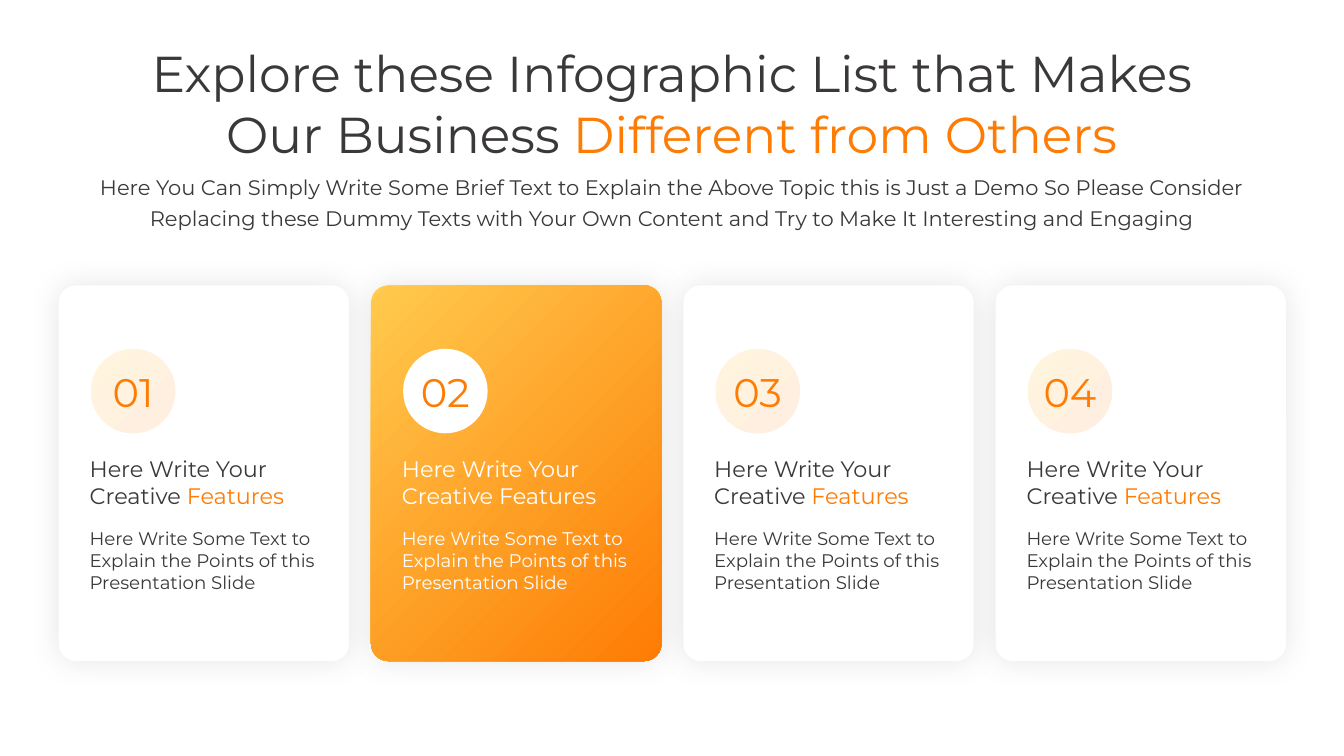
from lxml import etree
from pptx import Presentation
from pptx.dml.color import RGBColor
from pptx.enum.shapes import MSO_SHAPE as Shape
from pptx.enum.text import MSO_ANCHOR as Anchor, MSO_AUTO_SIZE as AutoSize, PP_ALIGN as Align
from pptx.oxml.ns import qn
from pptx.util import Cm, Pt

FONT = "Montserrat"
DARK, ORANGE, AMBER, WHITE = "3B3838", "FE7C04", "FFCA4E", "FFFFFF"
VIVID = ((0, ORANGE), (1, AMBER))
PALE = ((0.1, "FFEFE1"), (1, "FFF4DD"))

CARD_COUNT = 4
HIGHLIGHTED = 2
CARD_LEFT, CARD_TOP = 1.48, 7.19
CARD_WIDTH, CARD_HEIGHT = 7.32, 9.47
CARD_STEP = 7.87
BADGE_SIZE = 2.13
TEXT_WIDTH = 6.6


def color(value):
    return RGBColor.from_string(value)


def paint(shape, fill):
    """Fill with one hex colour, or with stops spreading from the bottom right corner."""
    if isinstance(fill, str):
        shape.fill.solid()
        shape.fill.fore_color.rgb = color(fill)
        return
    shape.fill.gradient()
    for stop, (position, value) in zip(shape.fill.gradient_stops, fill):
        stop.position = position
        stop.color.rgb = color(value)
    gradient = shape._element.spPr.find(qn("a:gradFill"))
    gradient.remove(gradient.find(qn("a:lin")))
    spread = etree.SubElement(gradient, qn("a:path"), path="circle")
    etree.SubElement(spread, qn("a:fillToRect"), l="100000", t="100000")
    etree.SubElement(gradient, qn("a:tileRect"), r="-100000", b="-100000")


def add_soft_shadow(shape):
    effects = shape._element.spPr.find(qn("a:effectLst"))
    shadow = etree.SubElement(effects, qn("a:outerShdw"), blurRad=str(Pt(22)),
                              dist="0", dir="0", algn="ctr", rotWithShape="0")
    black = etree.SubElement(shadow, qn("a:srgbClr"), val="000000")
    etree.SubElement(black, qn("a:alpha"), val="10000")


def write(shape, lines, size, align=Align.LEFT, spacing=None, anchor=Anchor.TOP):
    """Write lines, each a list of (text, colour) runs."""
    frame = shape.text_frame
    frame.word_wrap = True
    frame.auto_size = AutoSize.NONE
    frame.vertical_anchor = anchor
    for index, runs in enumerate(lines):
        paragraph = frame.add_paragraph() if index else frame.paragraphs[0]
        paragraph.alignment = align
        paragraph.space_before = Pt(0)
        paragraph.line_spacing = spacing
        paragraph.font.name = FONT
        paragraph.font.size = Pt(size)
        for text, value in runs:
            run = paragraph.add_run()
            run.text = text
            run.font.color.rgb = color(value)


def place(shape, left, top, width, height):
    shape.left, shape.top = Cm(left), Cm(top)
    shape.width, shape.height = Cm(width), Cm(height)


def add_shape(shapes, kind, left, top, width, height, fill):
    shape = shapes.add_shape(kind, Cm(left), Cm(top), Cm(width), Cm(height))
    shape.line.fill.background()
    shape.shadow.inherit = False
    paint(shape, fill)
    return shape


def add_text(shapes, left, top, height, lines, size):
    box = shapes.add_textbox(Cm(left), Cm(top), Cm(TEXT_WIDTH), Cm(height))
    write(box, lines, size)


def add_card(slide, number):
    shapes = slide.shapes.add_group_shape().shapes
    left = CARD_LEFT + (number - 1) * CARD_STEP
    highlighted = number == HIGHLIGHTED
    text_color = WHITE if highlighted else DARK
    accent = WHITE if highlighted else ORANGE

    card = add_shape(shapes, Shape.ROUNDED_RECTANGLE, left, CARD_TOP,
                     CARD_WIDTH, CARD_HEIGHT, VIVID if highlighted else WHITE)
    card.adjustments[0] = 0.06
    add_soft_shadow(card)

    badge = add_shape(shapes, Shape.OVAL, left + 0.81, 8.79,
                      BADGE_SIZE, BADGE_SIZE, WHITE if highlighted else PALE)
    frame = badge.text_frame
    frame.margin_left = frame.margin_right = frame.margin_top = frame.margin_bottom = 0
    write(badge, [[(f"{number:02}", ORANGE)]], 28.5, Align.CENTER, anchor=Anchor.MIDDLE)

    add_text(shapes, left + 0.53, 11.35, 1.65, [
        [("Here Write Your", text_color)],
        [("Creative ", text_color), ("Features", accent)],
    ], 16)
    body = ("Here Write Some Text to", "Explain the Points of this", "Presentation Slide")
    add_text(shapes, left + 0.53, 13.16, 1.93, [[(line, text_color)] for line in body], 13)


def main():
    presentation = Presentation()
    presentation.slide_width, presentation.slide_height = Cm(33.87), Cm(19.05)
    slide = presentation.slides.add_slide(presentation.slide_layouts[0])

    title, subtitle = slide.placeholders
    place(title, 2.39, 0.94, 29.08, 3.33)
    write(title, [
        [("Explore these Infographic List that Makes", DARK)],
        [("Our Business ", DARK), ("Different from Others", ORANGE)],
    ], 36, Align.CENTER)
    place(subtitle, 1.73, 4.14, 30.4, 1.75)
    write(subtitle, [
        [("Here You Can Simply Write Some Brief Text to Explain the Above Topic "
          "this is Just a Demo So Please Consider", DARK)],
        [("Replacing these Dummy Texts with Your Own Content and Try to Make It "
          "Interesting and Engaging", DARK)],
    ], 15, Align.CENTER, Pt(22))

    for number in range(1, CARD_COUNT + 1):
        add_card(slide, number)

    presentation.save("out.pptx")


if __name__ == "__main__":
    main()
